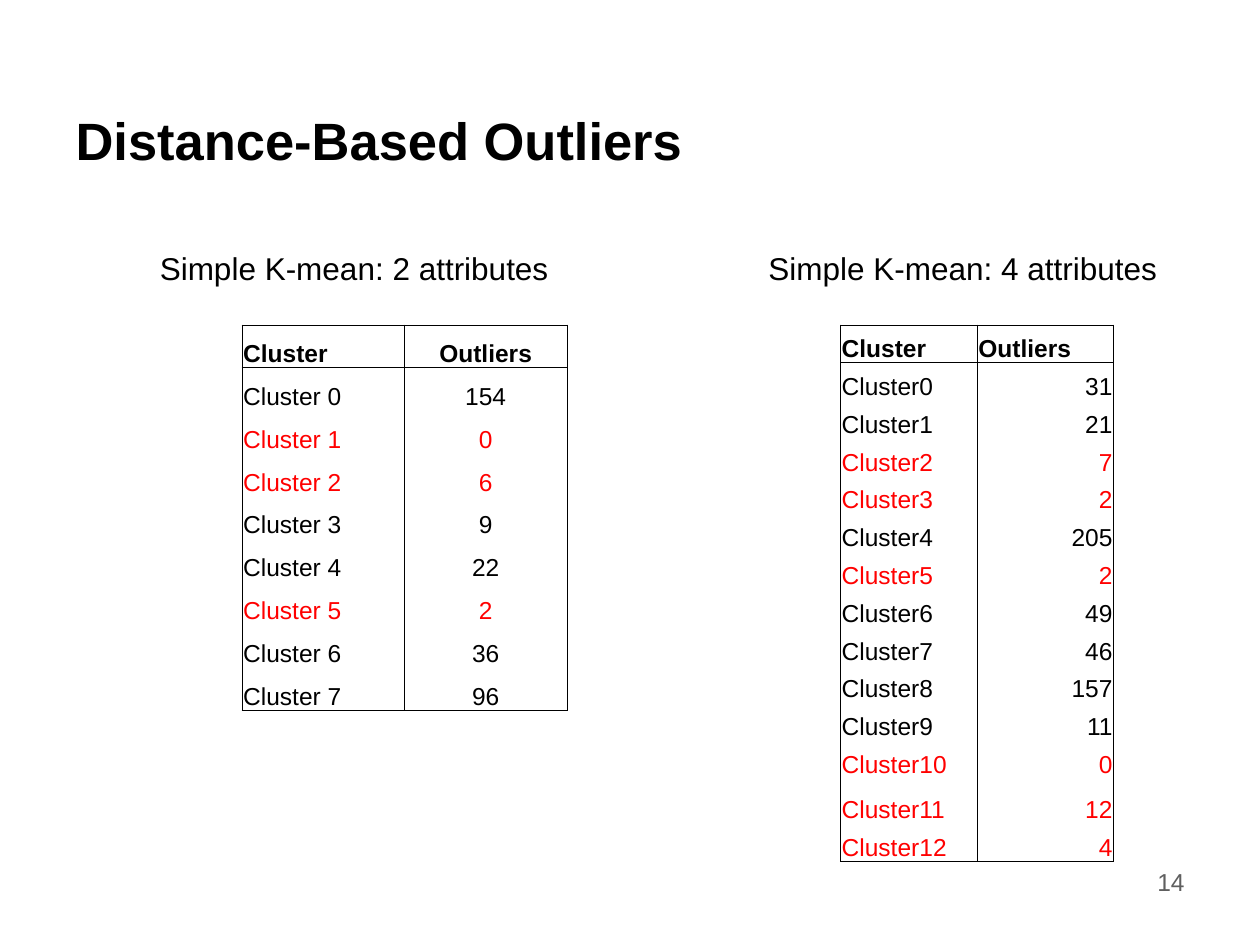
from lxml import etree
from pptx import Presentation
from pptx.dml.color import RGBColor
from pptx.enum import text
from pptx.oxml.ns import qn
from pptx.util import Inches, Pt

BLACK, RED, GREY = "000000", "FF0000", "5F5F5F"
LEFT, MID, RIGHT = text.PP_ALIGN.LEFT, text.PP_ALIGN.CENTER, text.PP_ALIGN.RIGHT


def style(par, words, size, color=BLACK, bold=False, align=LEFT):
    par.text = words
    par.alignment = align
    font = par.font
    font.name, font.size, font.bold = "Arial", Pt(size), bold
    font.color.rgb = RGBColor.from_string(color)


def border(cell, sides):
    props = cell._tc.get_or_add_tcPr()
    for side in "LRTB":
        line = etree.SubElement(props, qn("a:ln" + side), w=str(Pt(0.5)))
        if side in sides:
            fill = etree.SubElement(line, qn("a:solidFill"))
            etree.SubElement(fill, qn("a:srgbClr"), val=BLACK)
        else:
            etree.SubElement(line, qn("a:noFill"))


prs = Presentation()
prs.slide_width, prs.slide_height = Inches(10), Inches(7.5)
slide = prs.slides.add_slide(prs.slide_layouts[5])

# Title
title = slide.shapes.title
title.left, title.top = Inches(0.5), Inches(0.67)
title.width, title.height = Inches(9), Inches(0.88)
title.text_frame.vertical_anchor = text.MSO_ANCHOR.MIDDLE
style(title.text_frame.paragraphs[0], "Distance-Based Outliers", 30, bold=True)

# Table headings and page number
labels = [
    ("Simple K-mean: 2 attributes", 1.17, 1.93, 3.33, 0.4, 18, BLACK, LEFT),
    ("Simple K-mean: 4 attributes", 6, 1.93, 3.33, 0.4, 18, BLACK, LEFT),
    ("14", 7.17, 6.83, 2.33, 0.52, 14, GREY, RIGHT),
]
for words, x, y, wide, high, size, color, align in labels:
    box = slide.shapes.add_textbox(Inches(x), Inches(y), Inches(wide), Inches(high))
    box.text_frame.word_wrap = True
    style(box.text_frame.paragraphs[0], words, size, color, align=align)

# Tables: name prefix, left, width, row height, outlier counts, red clusters,
# header and value alignment, taller rows
tables = [
    ("Cluster ", 1.92, 2.58, 0.34, [154, 0, 6, 9, 22, 2, 36, 96],
     {1, 2, 5}, MID, MID, {}),
    ("Cluster", 6.67, 2.17, 0.3,
     [31, 21, 7, 2, 205, 2, 49, 46, 157, 11, 0, 12, 4],
     {2, 3, 5, 10, 11, 12}, LEFT, RIGHT, {12: 0.36}),
]
for name, x, wide, high, counts, reds, top, side, tall in tables:
    rows = [("Cluster", "Outliers")]
    rows += [(f"{name}{i}", str(n)) for i, n in enumerate(counts)]
    last = len(rows) - 1
    table = slide.shapes.add_table(
        len(rows), 2, Inches(x), Inches(2.58), Inches(wide),
        Inches(high * len(rows))).table
    table.first_row = table.horz_banding = False
    for r, row in enumerate(rows):
        table.rows[r].height = Inches(tall.get(r, high))
        sides = "LR" + "T" * (r < 2) + "B" * (r in (0, last))
        for c, words in enumerate(row):
            cell = table.cell(r, c)
            border(cell, sides)
            cell.fill.background()
            cell.vertical_anchor = text.MSO_ANCHOR.BOTTOM
            cell.margin_left = cell.margin_right = cell.margin_top = Inches(0.01)
            cell.margin_bottom = 0
            align = LEFT if c == 0 else top if r == 0 else side
            style(cell.text_frame.paragraphs[0], words, 14,
                  RED if r - 1 in reds else BLACK, r == 0, align)

prs.save("out.pptx")
